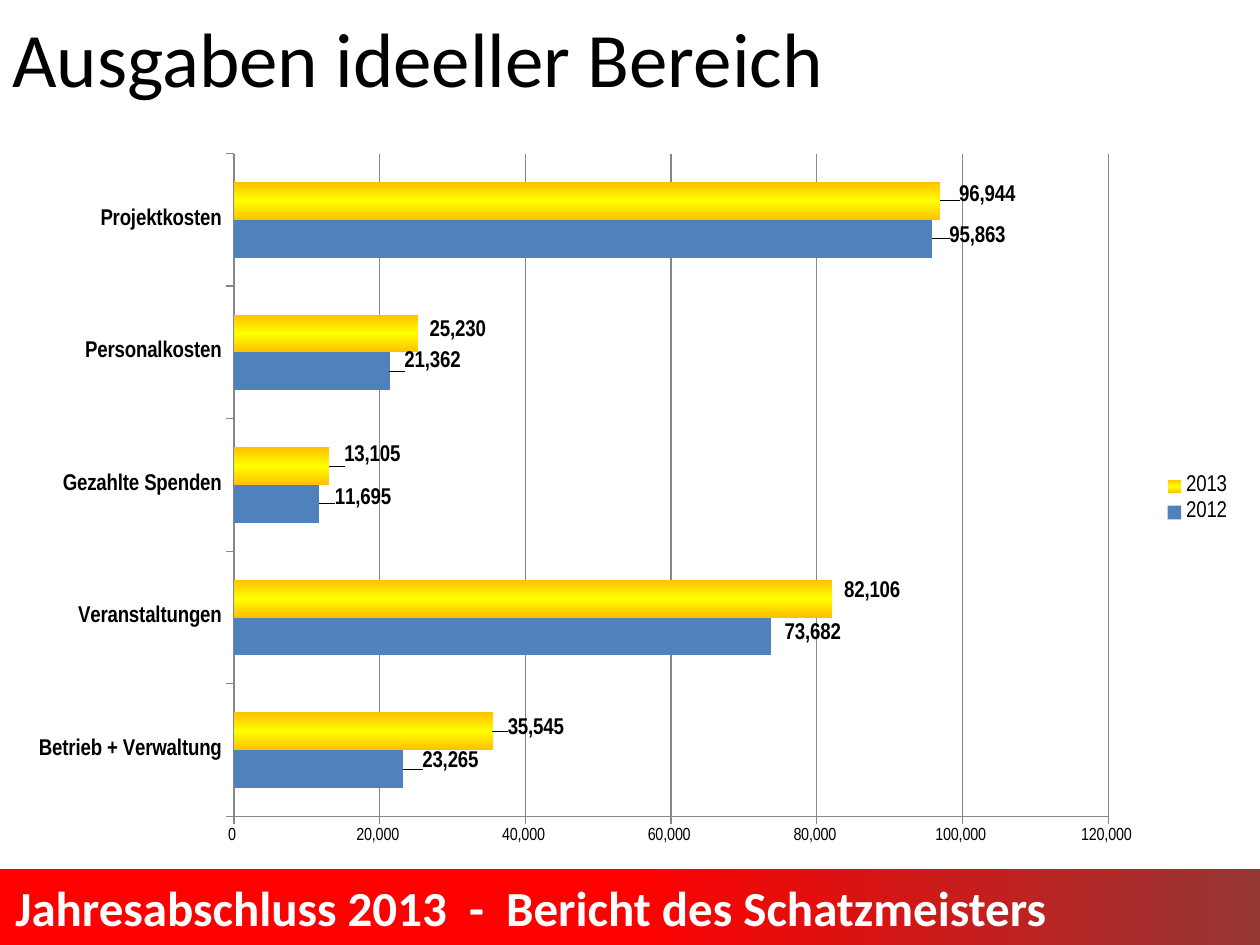
"""Build the slide on the association's spending, with its bar chart."""
from copy import deepcopy

from lxml import etree
from pptx import Presentation, util as u
from pptx.chart.data import CategoryChartData
from pptx.dml.color import RGBColor
from pptx.enum import chart as ch, shapes, text
from pptx.oxml.ns import qn

COL = {"red": "FF0000", "wine": "953735", "white": "FFFFFF", "black": "000000",
       "blue": "4F81BD", "gold": "FFC000", "sun": "FFFF00", "grey": "878787"}
SCALE = 914400 / 126
FORM = r"#,##0_ ;[Red]\-#,##0\ "
WIDE, TALL = 1230, 719
CATS = ["Betrieb + Verwaltung", "Veranstaltungen", "Gezahlte Spenden",
        "Personalkosten", "Projektkosten"]
DATA = {"2012": [23265, 73682, 11695, 21362, 95863],
        "2013": [35545, 82106, 13105, 25230, 96944]}
SHIFT = {"2012": [(14, -7), (9, -2), (11, -5), (10, -9), (12, -2)],
         "2013": [(10, -2), (7, -6), (10, -10), (7, -2), (14, -5)]}


def px(n):
    """Turn px into EMU."""
    return u.Emu(round(n * SCALE))


def rgb(name):
    """Look up a colour."""
    return RGBColor.from_string(COL[name])


def style(font, size, face, hue="black", bold=False):
    """Set size, face, colour and weight of a font."""
    font.size, font.name, font.bold = u.Pt(size), face, bold
    font.color.rgb = rgb(hue)


def blend(fill, node, hues, angle):
    """Give a fill three evenly spaced gradient stops."""
    fill.gradient()
    fill.gradient_angle = angle
    stops = node.xpath(".//a:gsLst")[0]
    stops.insert(1, deepcopy(stops[0]))
    for i, (stop, hue) in enumerate(zip(fill.gradient_stops, hues)):
        stop.position = i / 2
        stop.color.rgb = rgb(hue)


def add_band(slide):
    """Draw the footer band."""
    band = slide.shapes.add_shape(shapes.MSO_SHAPE.RECTANGLE,
                                  px(0), px(869), px(1260), px(76))
    band.shadow.inherit = False
    band.line.fill.background()
    blend(band.fill, band.element.spPr, ["red", "red", "wine"], 0)


def add_text(slide, words, box, size, hue, bold=False, top=6):
    """Place one line of text."""
    frame = slide.shapes.add_textbox(*map(px, box)).text_frame
    frame.word_wrap = True
    frame.vertical_anchor = text.MSO_ANCHOR.TOP
    frame.margin_top = px(top)
    frame.text = words
    style(frame.paragraphs[0].runs[0].font, size, "Calibri", hue, bold)


def add_layout(parent, spot, **vals):
    """Insert a manual chart layout at a child index."""
    for old in parent.findall(qn("c:layout")):
        parent.remove(old)
    lay = etree.Element(qn("c:layout"))
    man = etree.SubElement(lay, qn("c:manualLayout"))
    for key, val in vals.items():
        etree.SubElement(man, qn("c:" + key)).set("val", str(val))
    parent.insert(spot, lay)


def set_axis(axis, size, bold):
    """Style an axis and its labels."""
    axis.major_tick_mark = ch.XL_TICK_MARK.OUTSIDE
    axis.minor_tick_mark = ch.XL_TICK_MARK.NONE
    axis.format.line.color.rgb = rgb("grey")
    style(axis.tick_labels.font, size, "Arial Narrow", bold=bold)


def set_labels(series):
    """Show the values beside the bars, each with its own shift."""
    labels = series.data_labels
    labels.show_value = True
    labels.number_format, labels.number_format_is_linked = FORM, False
    labels.position = ch.XL_LABEL_POSITION.OUTSIDE_END
    style(labels.font, 13, "Arial Narrow", bold=True)
    for i, (dx, dy) in enumerate(SHIFT[series.name]):
        label = series.points[i].data_label
        style(label.font, 13, "Arial Narrow", bold=True)
        label.position = ch.XL_LABEL_POSITION.OUTSIDE_END
        node = series._element.xpath(f"c:dLbls/c:dLbl[c:idx/@val='{i}']")[0]
        add_layout(node, 1, x=round(dx / WIDE, 4), y=round(dy / TALL, 4))


def add_bars(slide):
    """Add the bar chart of both years."""
    data = CategoryChartData(number_format=FORM)
    data.categories = CATS
    for name, vals in DATA.items():
        data.add_series(name, vals)
    chart = slide.shapes.add_chart(ch.XL_CHART_TYPE.BAR_CLUSTERED, px(15), px(140),
                                   px(WIDE), px(TALL), data).chart
    style(chart.font, 10, "Calibri")
    chart.has_title = False
    chart.has_legend = True
    chart.legend.position = ch.XL_LEGEND_POSITION.RIGHT
    chart.legend.include_in_layout = False
    style(chart.legend.font, 13, "Arial Narrow")
    set_axis(chart.category_axis, 13, True)
    axis = chart.value_axis
    set_axis(axis, 10, False)
    axis.minimum_scale, axis.maximum_scale, axis.major_unit = 0, 120000, 20000
    axis.has_major_gridlines = True
    axis.major_gridlines.format.line.color.rgb = rgb("grey")
    axis.tick_labels.number_format = FORM
    axis.tick_labels.number_format_is_linked = False
    plot = chart.plots[0]
    plot.gap_width, plot.overlap, plot.vary_by_categories = 150, 0, False
    old, new = plot.series
    old.format.fill.solid()
    old.format.fill.fore_color.rgb = rgb("blue")
    blend(new.format.fill, new._element, ["gold", "sun", "gold"], 90)
    for series in (old, new):
        set_labels(series)
    area = chart._chartSpace.xpath("c:chart/c:plotArea")[0]
    add_layout(area, 0, layoutTarget="inner", xMode="edge", yMode="edge",
               x=0.178, y=0.019, w=0.711, h=0.922)


def main():
    """Build and save the slide."""
    deck = Presentation()
    deck.slide_width, deck.slide_height = px(1260), px(945)
    slide = deck.slides.add_slide(deck.slide_layouts[6])
    add_band(slide)
    add_text(slide, "Jahresabschluss 2013  -  Bericht des Schatzmeisters",
             (3, 872, 1233, 72), 28, "white", bold=True)
    add_text(slide, "Ausgaben ideeller Bereich", (0, 0, 1022, 84), 44, "black", top=10)
    add_bars(slide)
    deck.save("out.pptx")


if __name__ == "__main__":
    main()
